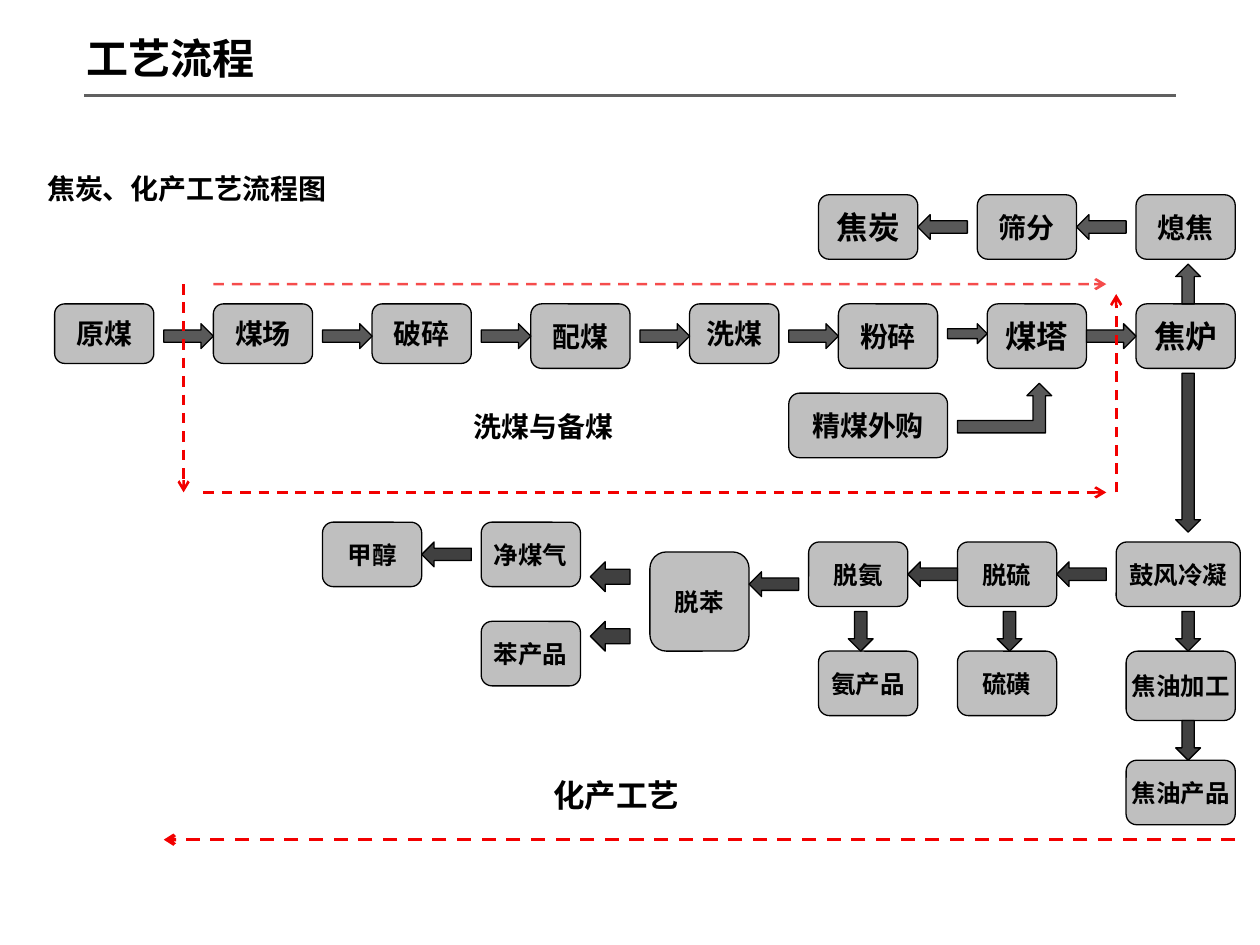
from dataclasses import dataclass

from lxml import etree
from pptx import Presentation
from pptx.dml.color import RGBColor
from pptx.enum.dml import MSO_LINE
from pptx.enum.shapes import MSO_CONNECTOR, MSO_SHAPE as SHAPE
from pptx.enum.text import MSO_ANCHOR, MSO_AUTO_SIZE, PP_ALIGN
from pptx.oxml.ns import qn
from pptx.util import Inches, Pt

BLACK = RGBColor(0x00, 0x00, 0x00)
RULE_GREY = RGBColor(0x60, 0x60, 0x60)
BOX_GREY = RGBColor(0xBF, 0xBF, 0xBF)
MID_GREY = RGBColor(0x59, 0x59, 0x59)
DARK_GREY = RGBColor(0x40, 0x40, 0x40)
RED = RGBColor(0xF2, 0x00, 0x00)

CJK = "Noto Sans CJK SC"
UNIT = 10 / 127  # one grid cell: 2 mm in inches
GRID_LEFT, GRID_TOP = 0.04, 0.05
STEP = SHAPE.FLOWCHART_ALTERNATE_PROCESS
STEP_W, STEP_H = 10, 6.5
ARROW_LEN, ARROW_W = 5, 2.5


@dataclass
class Region:
    """Part of the slide grid; positions inside it count from its corner."""
    shapes: object
    col: float
    row: float

    def point(self, col, row):
        return (Inches(GRID_LEFT + (self.col + col) * UNIT),
                Inches(GRID_TOP + (self.row + row) * UNIT))

    def rect(self, col, row, w, h):
        return *self.point(col, row), Inches(w * UNIT), Inches(h * UNIT)


def write(tf, text, size, font=CJK):
    tf.text = text
    r = tf.paragraphs[0].runs[0]
    r.font.size, r.font.bold, r.font.name = Pt(size), True, font
    r.font.color.rgb = BLACK
    ea = etree.SubElement(r._r.get_or_add_rPr(), qn("a:ea"))
    ea.set("typeface", CJK)


def add_block(region, kind, rect, fill):
    sp = region.shapes.add_shape(kind, *region.rect(*rect))
    sp.shadow.inherit = False
    sp.fill.solid()
    sp.fill.fore_color.rgb = fill
    sp.line.color.rgb = BLACK
    sp.line.width = Pt(0.75)
    return sp


def add_step(region, text, col, row, w=STEP_W, h=STEP_H, size=16, font=CJK,
             kind=STEP):
    tf = add_block(region, kind, (col, row, w, h), BOX_GREY).text_frame
    tf.word_wrap = False
    tf.vertical_anchor = MSO_ANCHOR.MIDDLE
    write(tf, text, size, font)
    tf.paragraphs[0].alignment = PP_ALIGN.CENTER


def add_label(region, text, col, row, w, h, size):
    box = region.shapes.add_textbox(*region.rect(col, row, w, h))
    tf = box.text_frame
    tf.word_wrap = True
    tf.auto_size = MSO_AUTO_SIZE.SHAPE_TO_FIT_TEXT
    write(tf, text, size)


def add_line(shapes, start, end, color, width):
    ln = shapes.add_connector(MSO_CONNECTOR.STRAIGHT, *start, *end)
    ln.line.color.rgb = color
    ln.line.width = Pt(width)
    etree.SubElement(ln._element.spPr, qn("a:effectLst"))
    return ln


def add_boundary(region, start, end, width=1.5, opacity=100):
    """Dashed red line with an open arrowhead at its end."""
    ln = add_line(region.shapes, region.point(*start), region.point(*end),
                  RED, width)
    ln.line.dash_style = MSO_LINE.DASH
    xml = ln.line._get_or_add_ln()
    etree.SubElement(xml, qn("a:tailEnd")).set("type", "arrow")
    if opacity < 100:
        color = xml.find(".//" + qn("a:srgbClr"))
        etree.SubElement(color, qn("a:alpha")).set("val", str(opacity * 1000))


def draw_heading(shapes):
    add_line(shapes, (Inches(0.67), Inches(0.76)),
             (Inches(9.33), Inches(0.76)), RULE_GREY, 1.5)
    box = shapes.add_textbox(Inches(0.59), Inches(0.21),
                             Inches(1.56), Inches(0.5))
    tf = box.text_frame
    tf.word_wrap = False
    tf.auto_size = MSO_AUTO_SIZE.SHAPE_TO_FIT_TEXT
    tf.vertical_anchor = MSO_ANCHOR.MIDDLE
    write(tf, "工艺流程", 24)


def draw_coal_preparation(region):
    row = 14
    chain = [  # text, column, width, height, size
        ("原煤", 2, 10, 6, 16), ("煤场", 18, 10, 6, 16),
        ("破碎", 34, 10, 6, 16), ("配煤", 50, 10, 6.5, 16),
        ("洗煤", 66, 9, 6, 16), ("粉碎", 81, 10, 6.5, 16),
        ("煤塔", 96, 10, 6.5, 18), ("焦炉", 111, 10, 6.5, 18),
    ]
    for i, (text, col, w, h, size) in enumerate(chain):
        add_step(region, text, col, row, w, h, size)
        if i:
            length, thick = (4, 2) if text == "煤塔" else (ARROW_LEN, ARROW_W)
            add_block(region, SHAPE.RIGHT_ARROW,
                      (col - length, row + 2, length, thick), MID_GREY)
    add_step(region, "精煤外购", 76, 23, w=16)
    add_block(region, SHAPE.BENT_UP_ARROW, (93, 22, 9.5, 5), MID_GREY)

    add_boundary(region, (18, 12), (108, 12), opacity=70)
    add_boundary(region, (15, 12), (15, 33))
    add_boundary(region, (17, 33), (108, 33))
    add_boundary(region, (109, 33), (109, 13))
    add_label(region, "焦炭、化产工艺流程图", 0, 0, 44, 4.7, 16)
    add_label(region, "洗煤与备煤", 43, 24, 17, 4.7, 16)


def draw_coke_output(region):
    for i, (text, size, kind) in enumerate([
            ("焦炭", 18, SHAPE.ROUNDED_RECTANGLE),
            ("筛分", 16, SHAPE.ROUNDED_RECTANGLE), ("熄焦", 16, STEP)]):
        col = i * 16
        add_step(region, text, col, 0, size=size, kind=kind)
        if i:
            add_block(region, SHAPE.LEFT_ARROW,
                      (col - 6, 2, ARROW_LEN, ARROW_W), MID_GREY)
    add_block(region, SHAPE.UP_ARROW, (36, 7, ARROW_W, 4), MID_GREY)


def draw_chemical_products(region):
    steps = [  # text, column, row, width, height
        ("鼓风冷凝", 96, 17, 12.5, STEP_H), ("脱硫", 80, 17, STEP_W, STEP_H),
        ("脱氨", 65, 17, STEP_W, STEP_H), ("脱苯", 49, 18, STEP_W, 10),
        ("净煤气", 32, 15, STEP_W, STEP_H), ("苯产品", 32, 25, STEP_W, STEP_H),
        ("甲醇", 16, 15, STEP_W, STEP_H), ("氨产品", 66, 28, STEP_W, STEP_H),
        ("硫磺", 80, 28, STEP_W, STEP_H), ("焦油加工", 97, 28, 11, 7),
        ("焦油产品", 97, 39, 11, STEP_H),
    ]
    for text, *rect in steps:
        add_step(region, text, *rect, size=14, font="Arial")

    left = [(c, r, ARROW_LEN, ARROW_W)
            for c, r in [(90, 19), (75, 19), (59, 20), (26, 17)]]
    left += [(43, r, 4, 3) for r in (19, 25)]
    down = [(c, r, ARROW_W, 4)
            for c, r in [(69, 24), (84, 24), (102, 24), (102, 35)]]
    down.append((102, 0, ARROW_W, 16))
    for kind, rects in ((SHAPE.LEFT_ARROW, left), (SHAPE.DOWN_ARROW, down)):
        for rect in rects:
            add_block(region, kind, rect, DARK_GREY)

    add_label(region, "化产工艺", 38, 40, 18, 5.1, 18)
    add_boundary(region, (108, 47), (0, 47), width=2)


def main():
    prs = Presentation()
    prs.slide_width, prs.slide_height = Inches(10), Inches(7.5)
    s = prs.slides.add_slide(prs.slide_layouts[6])
    draw_heading(s.shapes)
    draw_coal_preparation(Region(s.shapes, 3, 16))
    draw_coke_output(Region(s.shapes, 82, 19))
    draw_chemical_products(Region(s.shapes, 16, 37))
    prs.save("out.pptx")


if __name__ == "__main__":
    main()
